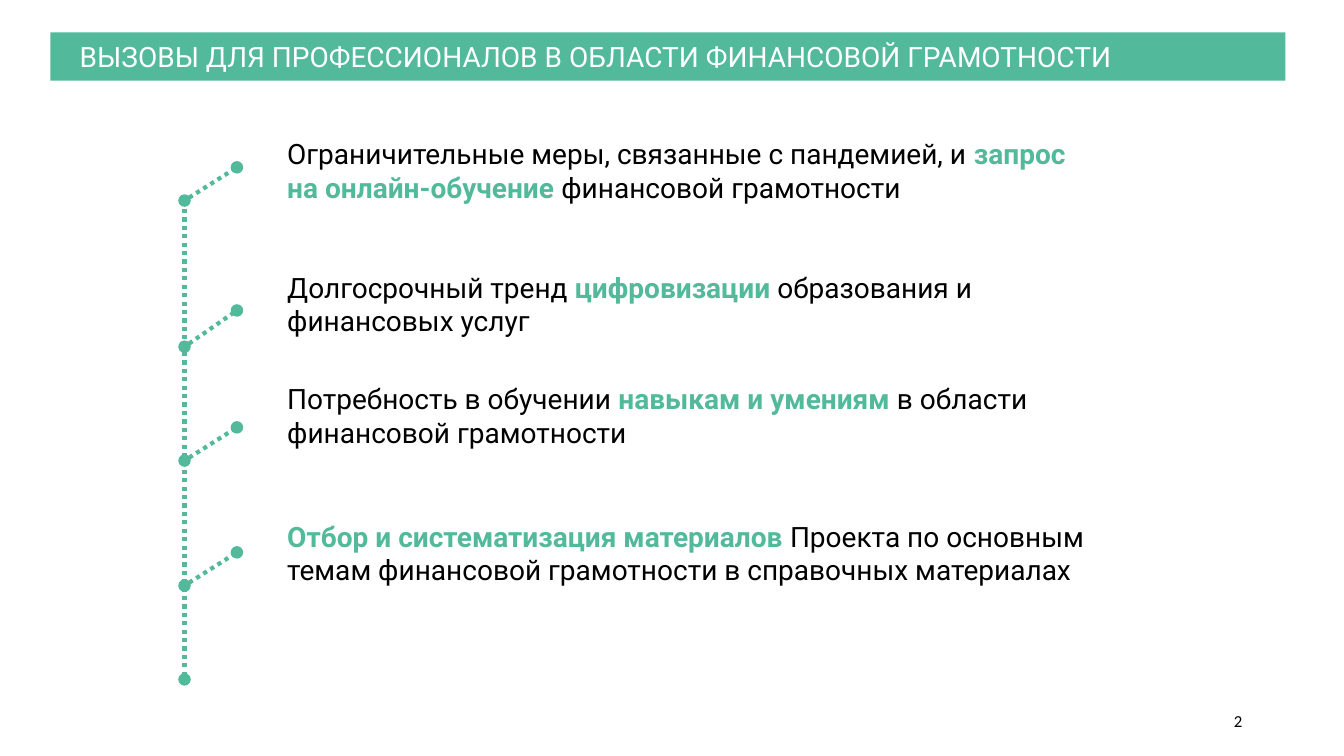
from typing import NamedTuple

from lxml.etree import SubElement
from pptx import Presentation
from pptx.dml.color import RGBColor
from pptx.enum.dml import MSO_LINE
from pptx.enum.shapes import MSO_CONNECTOR
from pptx.enum.text import MSO_ANCHOR, MSO_AUTO_SIZE, PP_ALIGN
from pptx.oxml.ns import qn
from pptx.util import Inches, Pt

COLORS = {"green": "52BA9A", "white": "FFFFFF", "black": "000000"}
STEM_X, STEM_BOTTOM = 1.83, 6.74
BRANCH_X = 2.35
TEXT_LEFT, TEXT_WIDTH = 2.75, 8.15


class Span(NamedTuple):
    text: str
    strong: bool = False


class Challenge(NamedTuple):
    text_top: float
    text_height: float
    branch_y: float
    stem_y: float
    spans: tuple[Span, ...]


CHALLENGES = (
    Challenge(1.31, 0.77, 1.66, 1.99, (
        Span("Ограничительные меры, связанные с пандемией, и"),
        Span(" запрос на онлайн-обучение ", True),
        Span("финансовой грамотности"))),
    Challenge(2.63, 0.77, 3.08, 3.44, (
        Span("Долгосрочный тренд "),
        Span("цифровизации ", True),
        Span("образования и финансовых услуг"))),
    Challenge(3.74, 0.77, 4.24, 4.57, (
        Span("Потребность в обучении "),
        Span("навыкам и умениям ", True),
        Span("в области финансовой грамотности"))),
    Challenge(5.1, 1.11, 5.48, 5.81, (
        Span("Отбор и систематизация материалов ", True),
        Span("Проекта по основным темам финансовой грамотности "
             "в справочных материалах"))),
)


def rgb(name: str) -> RGBColor:
    return RGBColor.from_string(COLORS[name])


def add_span(para, text: str, *, size: float = 20, font: str = "Roboto",
             color: str = "black", bold: bool = False) -> None:
    span = para.add_run()
    span.text = text
    span.font.size = Pt(size)
    span.font.name = font
    span.font.bold = bold
    span.font.color.rgb = rgb(color)


def add_box(page, left: float, top: float, width: float, height: float):
    box = page.shapes.add_textbox(
        Inches(left), Inches(top), Inches(width), Inches(height))
    box.text_frame.word_wrap = True
    return box


def add_dotted_line(page, start: tuple[float, float], end: tuple[float, float],
                    *, start_dot: bool = True) -> None:
    """Draw a dotted line with a round dot at its end and, by default, its start."""
    line = page.shapes.add_connector(
        MSO_CONNECTOR.STRAIGHT, *(Inches(value) for value in start + end))
    line.line.color.rgb = rgb("green")
    line.line.width = Pt(3)
    line.line.dash_style = MSO_LINE.ROUND_DOT
    properties = line.line._get_or_add_ln()
    if start_dot:
        SubElement(properties, qn("a:headEnd"), type="oval")
    SubElement(properties, qn("a:tailEnd"), type="oval")
    SubElement(line._element.spPr, qn("a:effectLst"))


def add_title(page, text: str) -> None:
    title = page.shapes.title
    title.left, title.top = Inches(0.5), Inches(0.32)
    title.width, title.height = Inches(12.25), Inches(0.48)
    title.fill.solid()
    title.fill.fore_color.rgb = rgb("green")
    frame = title.text_frame
    frame.word_wrap = True
    frame.auto_size = MSO_AUTO_SIZE.NONE
    frame.vertical_anchor = MSO_ANCHOR.MIDDLE
    frame.margin_left = Inches(0.29)
    para = frame.paragraphs[0]
    para.alignment = PP_ALIGN.LEFT
    add_span(para, text, color="white")


def add_challenge(page, challenge: Challenge) -> None:
    add_dotted_line(page, (STEM_X, challenge.stem_y),
                    (BRANCH_X, challenge.branch_y))
    box = add_box(page, TEXT_LEFT, challenge.text_top,
                  TEXT_WIDTH, challenge.text_height)
    box.text_frame.auto_size = MSO_AUTO_SIZE.SHAPE_TO_FIT_TEXT
    for span in challenge.spans:
        add_span(box.text_frame.paragraphs[0], span.text, bold=span.strong,
                 color="green" if span.strong else "black")


def add_page_number(page, number: int) -> None:
    box = add_box(page, 9.42, 6.95, 3, 0.4)
    box.text_frame.vertical_anchor = MSO_ANCHOR.MIDDLE
    para = box.text_frame.paragraphs[0]
    para.alignment = PP_ALIGN.RIGHT
    add_span(para, str(number), size=12, font="Calibri")


def main() -> None:
    deck = Presentation()
    deck.slide_width, deck.slide_height = Inches(13.33), Inches(7.5)
    page = deck.slides.add_slide(deck.slide_layouts.get_by_name("Title Only"))
    add_title(page, "ВЫЗОВЫ ДЛЯ ПРОФЕССИОНАЛОВ В ОБЛАСТИ ФИНАНСОВОЙ ГРАМОТНОСТИ")
    add_dotted_line(page, (STEM_X, CHALLENGES[0].stem_y),
                    (STEM_X, STEM_BOTTOM), start_dot=False)
    for challenge in CHALLENGES:
        add_challenge(page, challenge)
    add_page_number(page, 2)
    deck.save("out.pptx")


if __name__ == "__main__":
    main()
